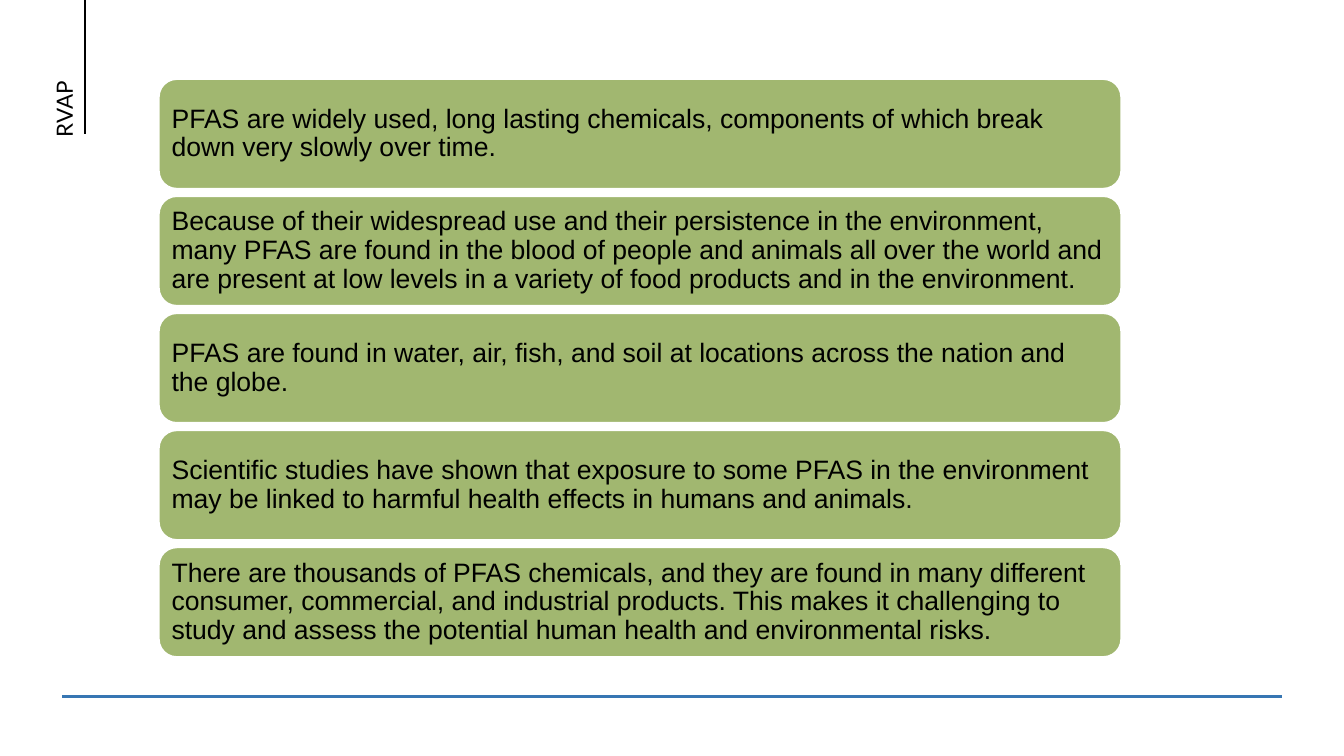
import pptx
import pptx.dml.color
import pptx.enum.shapes
import pptx.enum.text
import pptx.oxml.ns
import pptx.util
import lxml.etree

Cm = pptx.util.Cm
Pt = pptx.util.Pt
RGB = pptx.dml.color.RGBColor.from_string

theme = {
    "card": RGB("A1B770"),
    "card_edge": RGB("FFFFFF"),
    "footer_rule": RGB("3776B3"),
    "ink": RGB("000000"),
    "fact_size": Pt(19),
    "tag_size": Pt(16),
    "rule_width": Pt(1.5),
    "edge_width": Pt(2),
}

facts = [
    "PFAS are widely used, long lasting chemicals, components of which break down very slowly over time.",
    "Because of their widespread use and their persistence in the environment, many PFAS are found in the blood of people and animals all over the world and are present at low levels in a variety of food products and in the environment.",
    "PFAS are found in water, air, fish, and soil at locations across the nation and the globe.",
    "Scientific studies have shown that exposure to some PFAS in the environment may be linked to harmful health effects in humans and animals.",
    "There are thousands of PFAS chemicals, and they are found in many different consumer, commercial, and industrial products. This makes it challenging to study and assess the potential human health and environmental risks.",
]


def apply_format(target, values):
    for name, value in values.items():
        setattr(target, name, value)


def write_text(holder, words, margin, frame_format, font_format):
    frame = holder.text_frame
    margins = {f"margin_{side}": margin for side in ("left", "top", "right", "bottom")}
    apply_format(frame, margins | frame_format)
    paragraph = frame.paragraphs[0]
    paragraph.alignment = pptx.enum.text.PP_ALIGN.LEFT
    run = paragraph.add_run()
    run.text = words
    apply_format(run.font, font_format)
    run.font.color.rgb = theme["ink"]
    return paragraph


deck = pptx.Presentation()
apply_format(deck, {"slide_width": Cm(33.87), "slide_height": Cm(19.05)})
slide = deck.slides.add_slide(deck.slide_layouts[6])

rules = [
    (1.57, 17.55, 32.31, 17.55, theme["footer_rule"]),
    (2.14, 0, 2.14, 3.38, theme["ink"]),
]
for x1, y1, x2, y2, color in rules:
    rule = slide.shapes.add_connector(
        pptx.enum.shapes.MSO_CONNECTOR.STRAIGHT, Cm(x1), Cm(y1), Cm(x2), Cm(y2)
    )
    rule.line.color.rgb = color
    rule.line.width = theme["rule_width"]
    lxml.etree.SubElement(rule._element.spPr, pptx.oxml.ns.qn("a:effectLst"))

tag = slide.shapes.add_textbox(Cm(0.03), Cm(1.5), Cm(3.2), Cm(1.37))
tag.rotation = 270
write_text(
    tag,
    "RVAP",
    Cm(0.33),
    {"word_wrap": True},
    {"name": "Lato", "size": theme["tag_size"]},
)

card_left, first_top, card_width, card_height, pitch = 3.99, 1.98, 24.28, 2.79, 2.95
for row, fact in enumerate(facts):
    card = slide.shapes.add_shape(
        pptx.enum.shapes.MSO_SHAPE.ROUNDED_RECTANGLE,
        Cm(card_left), Cm(first_top + row * pitch), Cm(card_width), Cm(card_height),
    )
    card.shadow.inherit = False
    card.fill.solid()
    card.fill.fore_color.rgb = theme["card"]
    card.line.color.rgb = theme["card_edge"]
    card.line.width = theme["edge_width"]
    paragraph = write_text(
        card,
        fact,
        Cm(0.2),
        {"word_wrap": True, "vertical_anchor": pptx.enum.text.MSO_ANCHOR.MIDDLE},
        {"name": "Arial", "size": theme["fact_size"]},
    )
    paragraph.line_spacing = 0.9

deck.save("out.pptx")
